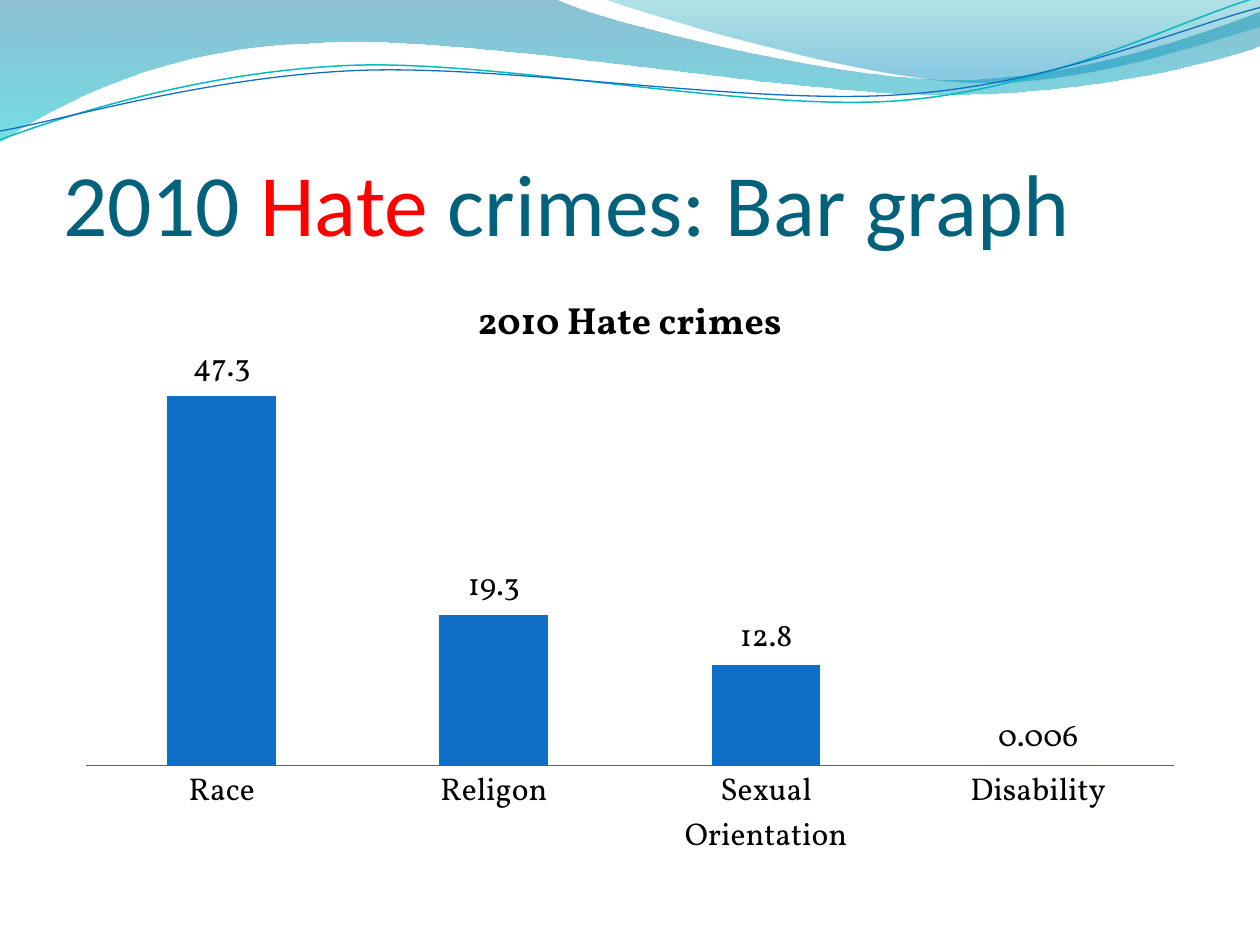
from lxml import etree
from pptx import Presentation
from pptx import util as u
from pptx.chart import data as chart_data
from pptx.dml import color
from pptx.enum import chart as charts, text
from pptx.oxml import ns

COLORS = {"title": "04617B", "accent": "FF0000", "bar": "0F6FC6", "ink": "000000",
          "axis": "606060", "teal": "0AB8BF", "deep": "0074A1", "aqua": "00C6CF",
          "green": "00A1A9", "sky": "008BBF"}
COLUMNS, ROWS = 10, 7.5


def rgb(name):
    return color.RGBColor.from_string(COLORS[name])


def apply(target, **values):
    for name, value in values.items():
        setattr(target, name, value)


class SlideBuilder:
    title_font, body_font = "Calibri", "Vollkorn"
    title_size, body_size, heading_size = 50, 18, 21.6

    def __init__(self, deck):
        self.cell = u.Inches(1)
        apply(deck, slide_width=int(COLUMNS * self.cell), slide_height=int(ROWS * self.cell))
        self.slide = deck.slides.add_slide(deck.slide_layouts[5])

    def place(self, *cells):
        return [int(cell * self.cell) for cell in cells]

    def outline(self, start, steps, closed):
        builder = self.slide.shapes.build_freeform(*self.place(*start))
        points = [self.place(*step[i:i + 2]) for step in steps for i in range(0, len(step), 2)]
        builder.add_line_segments(points, close=closed)
        shape = builder.convert_to_shape()
        shape.shadow.inherit = False
        segments = iter(list(shape._element.iter(ns.qn("a:lnTo"))))
        for step in steps:
            group = [next(segments) for _ in range(len(step) // 2)]
            if len(group) == 3:
                self.bend(group)
        return shape

    def bend(self, group):
        curve = etree.Element(ns.qn("a:cubicBezTo"))
        group[0].addprevious(curve)
        for segment in group:
            curve.append(segment[0])
            segment.getparent().remove(segment)

    def wave(self, start, steps, stops):
        shape = self.outline(start, steps, True)
        shape.line.fill.background()
        shape.fill.gradient()
        shape.fill.gradient_angle = 270
        for stop, (position, name, _) in zip(shape.fill.gradient_stops, stops):
            stop.position = position
            stop.color.rgb = rgb(name)
        tones = shape._element.spPr.iter(ns.qn("a:srgbClr"))
        for tone, (_, _, opacity) in zip(tones, stops):
            etree.SubElement(tone, ns.qn("a:alpha"), val=str(opacity * 1000))

    def strand(self, start, steps, name, width):
        shape = self.outline(start, steps, False)
        shape.fill.background()
        shape.line.color.rgb = rgb(name)
        shape.line.width = u.Pt(width)

    def title(self, area, spans):
        box = self.slide.shapes.title
        self.slide.shapes._spTree.append(box._element)
        left, top, width, height = self.place(*area)
        apply(box, left=left, top=top, width=width, height=height)
        apply(box.text_frame, margin_left=0, margin_right=0, margin_top=u.Inches(0.05),
              margin_bottom=0, word_wrap=True, auto_size=text.MSO_AUTO_SIZE.NONE,
              vertical_anchor=text.MSO_ANCHOR.BOTTOM)
        para = box.text_frame.paragraphs[0]
        para.alignment = text.PP_ALIGN.LEFT
        for words, name in spans:
            span = para.add_run()
            span.text = words
            apply(span.font, size=u.Pt(self.title_size), name=self.title_font)
            span.font.color.rgb = rgb(name)

    def bar_chart(self, area, heading, series_name, values):
        data = chart_data.CategoryChartData()
        data.categories = list(values)
        data.add_series(series_name, list(values.values()))
        chart = self.slide.shapes.add_chart(
            charts.XL_CHART_TYPE.COLUMN_CLUSTERED, *self.place(*area), data).chart
        chart.has_legend = False
        apply(chart.font, size=u.Pt(self.body_size), name=self.body_font)
        chart.font.color.rgb = rgb("ink")

        chart.has_title = True
        chart.chart_title.include_in_layout = False
        para = chart.chart_title.text_frame.paragraphs[0]
        span = para.add_run()
        span.text = heading
        apply(span.font, size=u.Pt(self.heading_size), name=self.body_font, bold=True)
        span.font.color.rgb = rgb("ink")

        none = charts.XL_TICK_MARK.NONE
        apply(chart.category_axis, major_tick_mark=none, minor_tick_mark=none,
              has_major_gridlines=False)
        chart.category_axis.format.line.color.rgb = rgb("axis")
        apply(chart.value_axis, visible=False, has_major_gridlines=False,
              minimum_scale=0, maximum_scale=50)

        plot = chart.plots[0]
        apply(plot, gap_width=150, overlap=-25, vary_by_categories=False, has_data_labels=True)
        apply(plot.data_labels, show_value=True, number_format="General",
              number_format_is_linked=False,
              position=charts.XL_LABEL_POSITION.OUTSIDE_END)
        fill = plot.series[0].format.fill
        fill.solid()
        fill.fore_color.rgb = rgb("bar")


def main():
    deck = Presentation()
    page = SlideBuilder(deck)
    page.wave((0, 0), [(4.4, -0.01), (4.76, 0.17, 6.64, 0.63, 7.58, 0.63),
                       (8.53, 0.63, 9.58, 0.26, 10, 0.09), (10.01, 0.36),
                       (9.83, 0.44, 8.7, 0.76, 7.46, 0.75),
                       (6.22, 0.75, 3.82, 0.28, 2.57, 0.34),
                       (1.29, 0.36, 0.46, 0.83, -0.01, 1.13)],
              [(0, "deep", 45), (1, "aqua", 55)])
    page.wave((4.79, -0.01), [(5.09, 0.11, 6.82, 0.62, 7.69, 0.65),
                              (8.56, 0.69, 9.61, 0.32, 10, 0.21), (10, 0)],
              [(0, "green", 30), (0.8, "sky", 45)])
    page.strand((0, 1.11), [(0.48, 0.93, 1.58, 0.57, 2.77, 0.52),
                            (3.95, 0.47, 5.93, 0.89, 7.13, 0.8),
                            (8.33, 0.71, 9.38, 0.15, 9.98, -0.02)], "teal", 0.85)
    page.strand((0, 1.04), [(0.47, 0.96, 1.64, 0.61, 2.83, 0.56),
                            (4.03, 0.51, 5.97, 0.84, 7.17, 0.75),
                            (8.36, 0.67, 9.41, 0.21, 10, 0.06)], "bar", 0.75)
    page.title((0.5, 0.77, 9, 1.25),
               [("2010 ", "title"), ("Hate", "accent"), (" crimes: Bar graph", "title")])
    page.bar_chart((0.5, 2.12, 9, 4.8), "2010 Hate crimes", "Series 1",
                   {"Race": 47.3, "Religon": 19.3, "Sexual Orientation": 12.8,
                    "Disability": 0.006})
    deck.save("out.pptx")


if __name__ == "__main__":
    main()
